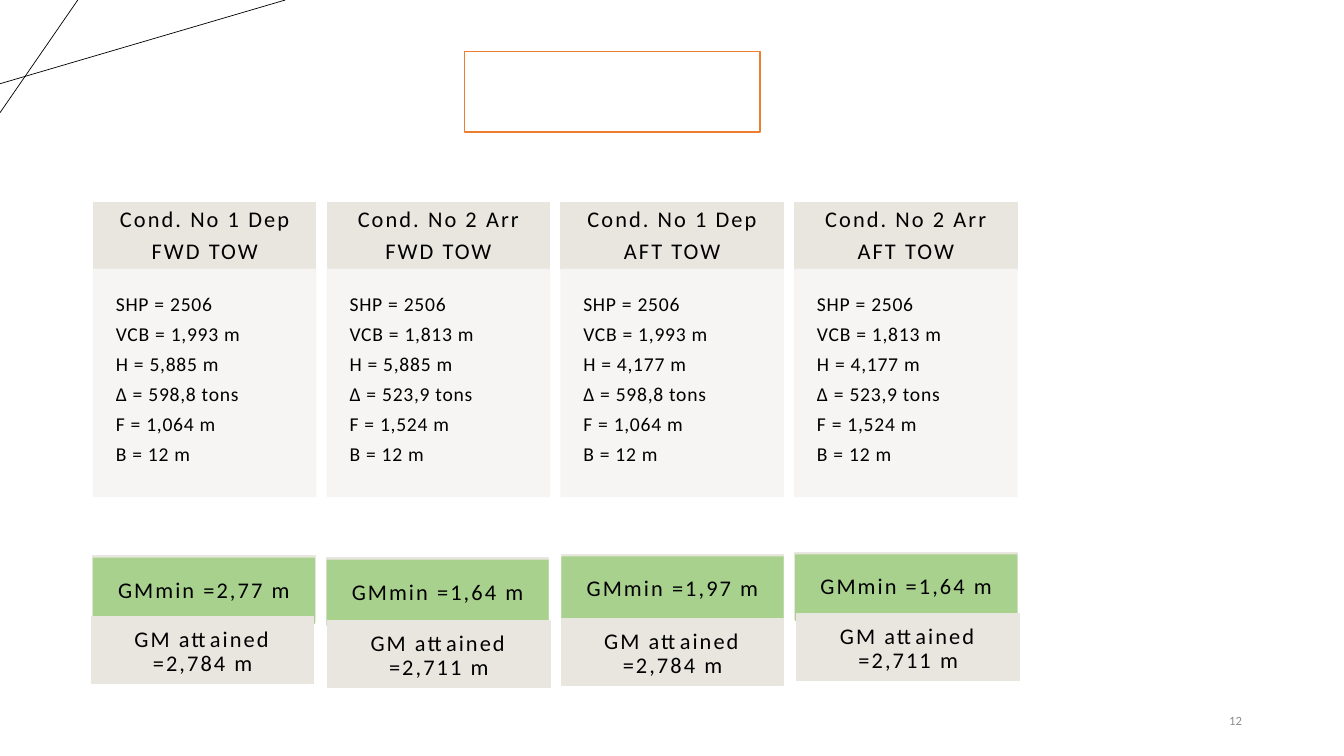
"""Build the slide of towing stability conditions."""
from lxml.etree import SubElement
from pptx import Presentation
from pptx.dml.color import RGBColor
from pptx.enum.shapes import MSO_CONNECTOR as Link, MSO_SHAPE as Kind
from pptx.enum.text import MSO_ANCHOR as Anchor, PP_ALIGN as Align
from pptx.oxml.ns import qn
from pptx.util import Cm, Pt

BLACK = RGBColor(0x00, 0x00, 0x00)
SAND = RGBColor(0xE9, 0xE6, 0xDF)
PALE = RGBColor(0xF7, 0xF5, 0xF3)
GREEN = RGBColor(0xA9, 0xD1, 0x8E)
ORANGE = RGBColor(0xED, 0x7D, 0x31)
GRAY = RGBColor(0x8C, 0x8C, 0x8C)

CASES = [
    ("Cond. No 1 Dep", "FWD TOW", "1,993", "5,885", "598,8", "1,064", "2,77", "2,784"),
    ("Cond. No 2 Arr", "FWD TOW", "1,813", "5,885", "523,9", "1,524", "1,64", "2,711"),
    ("Cond. No 1 Dep", "AFT TOW", "1,993", "4,177", "598,8", "1,064", "1,97", "2,784"),
    ("Cond. No 2 Arr", "AFT TOW", "1,813", "4,177", "523,9", "1,524", "1,64", "2,711"),
]
NEED = [(2.34, 14), (8.23, 14.05), (14.15, 13.97), (20.04, 13.92)]
GAINED = [(2.31, 15.54), (8.26, 15.65), (14.15, 15.6), (20.09, 15.47)]
RAYS = [(0, 2.11, 7.19, 0), (1.96, 0, 0, 2.84)]
LEFT, TOP, PITCH = 2.36, 5.11, 5.89
WIDE, HEAD, BODY = 5.6, 1.68, 5.72


def box(slide, x, y, w, h, fill=None, line=None):
    shape = slide.shapes.add_shape(Kind.RECTANGLE, Cm(x), Cm(y), Cm(w), Cm(h))
    shape.shadow.inherit = False
    if fill is None:
        shape.fill.background()
    else:
        shape.fill.solid()
        shape.fill.fore_color.rgb = fill
    if line is None:
        shape.line.fill.background()
    else:
        shape.line.color.rgb = line
        shape.line.width = Pt(1)
    return shape


def fade(shape):
    for tint in shape._element.spPr.iter(qn("a:srgbClr")):
        SubElement(tint, qn("a:alpha")).set("val", "90000")


def write(shape, lines, size, gap, track, pad, align=Align.CENTER,
          anchor=Anchor.MIDDLE, lead=0.9, color=BLACK):
    frame = shape.text_frame
    frame.word_wrap = True
    frame.vertical_anchor = anchor
    frame.margin_left = frame.margin_right = Cm(pad)
    frame.margin_top = frame.margin_bottom = Cm(pad)
    for i, line in enumerate(lines):
        para = frame.add_paragraph() if i else frame.paragraphs[0]
        run = para.add_run()
        run.text = line
        run._r.get_or_add_rPr().set("spc", str(track))
        para.alignment = align
        para.line_spacing = lead
        para.space_after = Pt(gap)
        font = para.font
        font.name = "Calibri"
        font.size = Pt(size)
        font.color.rgb = color


def label(shape, *lines):
    write(shape, lines, 16, 5.3, 150, 0.43)


def main():
    deck = Presentation()
    deck.slide_width, deck.slide_height = Cm(33.87), Cm(19.05)
    slide = deck.slides.add_slide(deck.slide_layouts[6])

    for ray in RAYS:
        line = slide.shapes.add_connector(Link.STRAIGHT, *map(Cm, ray))
        line.line.color.rgb = BLACK
        line.line.width = Pt(0.5)
        SubElement(line._element.spPr, qn("a:effectLst"))

    for i, (cond, tow, vcb, height, mass, free, need, gained) in enumerate(CASES):
        x = LEFT + i * PITCH
        label(box(slide, x, TOP, WIDE, HEAD, SAND, SAND), cond, tow)
        card = box(slide, x, TOP + HEAD, WIDE, BODY, PALE, PALE)
        fade(card)
        facts = ["SHP = 2506", f"VCB = {vcb} m", f"H = {height} m",
                 f"Δ = {mass} tons", f"F = {free} m", "B = 12 m"]
        write(card, facts, 14, 4.6, 50, 0.56, Align.LEFT, Anchor.TOP, 1.0)

        x, y = NEED[i]
        box(slide, x, y, WIDE, HEAD, SAND, SAND)
        label(box(slide, x, y + 0.05, WIDE, HEAD, GREEN), f"GMmin ={need} m")
        x, y = GAINED[i]
        plate = box(slide, x, y, WIDE, HEAD, SAND, SAND)
        label(plate, f"GM attained ={gained} m")
        plate.text_frame.margin_top = Cm(0.53)

    box(slide, 11.71, 1.3, 7.44, 2.03, line=ORANGE)
    number = slide.shapes.add_textbox(Cm(23.93), Cm(17.65), Cm(7.62), Cm(1.02))
    write(number, ["12"], 9, 0, 0, 0.25, Align.RIGHT, lead=1.0, color=GRAY)
    deck.save("out.pptx")


if __name__ == "__main__":
    main()
